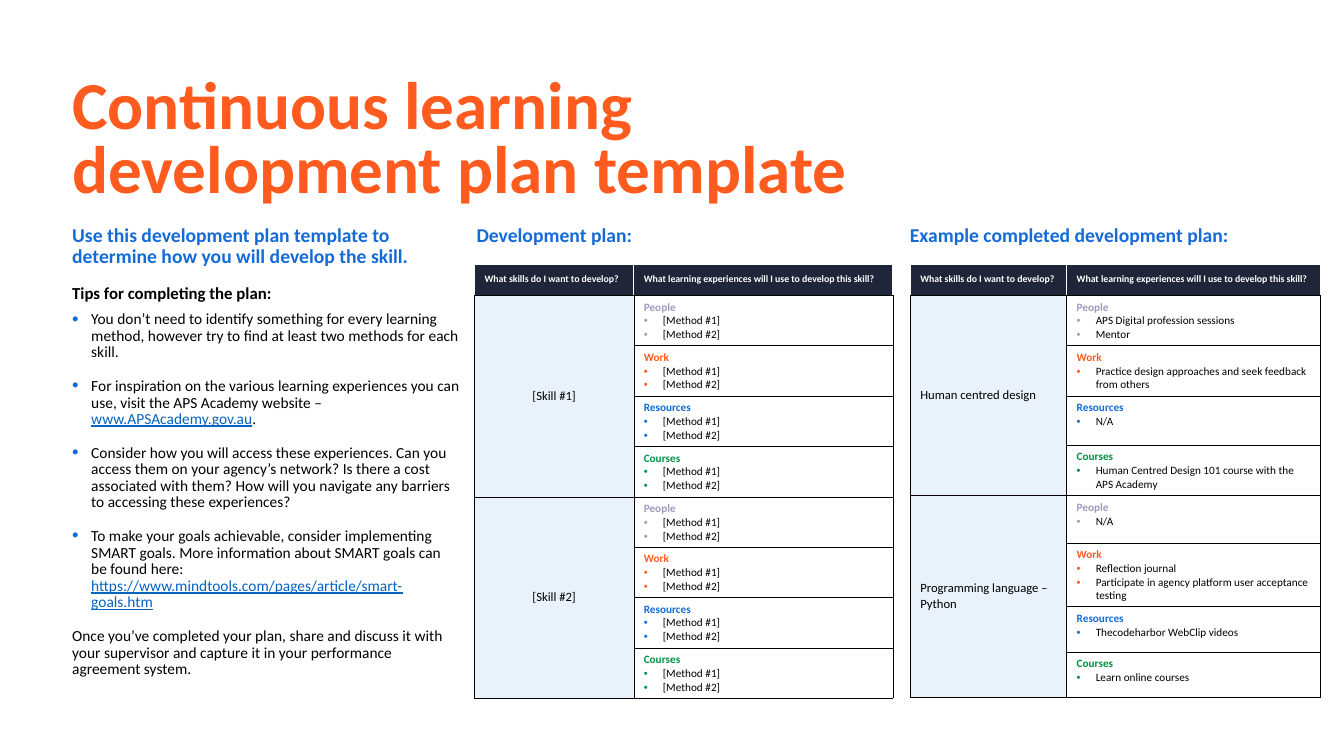
from lxml import etree
from pptx import Presentation
from pptx.dml.color import RGBColor
from pptx.enum.text import MSO_ANCHOR, PP_ALIGN
from pptx.oxml.ns import qn
from pptx.util import Cm, Pt

MIDDLE, BOTTOM = MSO_ANCHOR.MIDDLE, MSO_ANCHOR.BOTTOM
LEFT, CENTER = PP_ALIGN.LEFT, PP_ALIGN.CENTER
FONT = "Calibri"
COLORS = {
    "orange": "FF5B1E", "blue": "146BD7", "link": "0563C1", "black": "000000",
    "white": "FFFFFF", "navy": "202639", "pale": "E9F2FB",
    "lilac": "9C9CC0", "green": "009242",
}
CATEGORIES = [("People", "lilac"), ("Work", "orange"), ("Resources", "blue"), ("Courses", "green")]
HEADERS = ["What skills do I want to develop?",
           "What learning experiences will I use to develop this skill?"]


def format_runs(paragraph, size, color, bold=False):
    for run in paragraph.runs:
        run.font.name = FONT
        run.font.size = Pt(size)
        run.font.bold = bold
        run.font.color.rgb = RGBColor.from_string(COLORS[color])


def add_bullet(paragraph, color, percent):
    properties = paragraph._p.get_or_add_pPr()
    properties.set("marL", str(Cm(0.48)))
    properties.set("indent", str(-Cm(0.48)))
    bullet_color = etree.SubElement(properties, qn("a:buClr"))
    etree.SubElement(bullet_color, qn("a:srgbClr"), val=COLORS[color])
    etree.SubElement(properties, qn("a:buSzPct"), val=str(percent * 1000))
    etree.SubElement(properties, qn("a:buFont"), typeface="Arial")
    etree.SubElement(properties, qn("a:buChar"), char="•")


presentation = Presentation()
presentation.slide_width = Cm(33.87)
presentation.slide_height = Cm(19.05)
slide = presentation.slides.add_slide(presentation.slide_layouts[6])

headings = [
    ("Continuous learning development plan template", 1.57, 0.89, 23.34, 4.45, 48, "orange", 0.8),
    ("Development plan:", 11.76, 5.56, 10.54, 0.84, 14, "blue", 0.9),
    ("Example completed development plan:", 22.68, 5.56, 10.82, 0.84, 14, "blue", 0.9),
]
for text, left, top, width, height, size, color, spacing in headings:
    box = slide.shapes.add_textbox(Cm(left), Cm(top), Cm(width), Cm(height))
    box.text_frame.word_wrap = True
    if size == 48:
        box.text_frame.vertical_anchor = BOTTOM
    paragraph = box.text_frame.paragraphs[0]
    paragraph.text = text
    paragraph.line_spacing = spacing
    format_runs(paragraph, size, color, True)

tips = [
    ("Use this development plan template to determine how you will develop the skill.", "", "", 14, "blue", True, 6, False),
    ("Tips for completing the plan:", "", "", 12, "black", True, 0, False),
    ("You don’t need to identify something for every learning method, however try to find "
     "at least two methods for each skill.", "", "", 11, "black", False, 6, True),
    ("For inspiration on the various learning experiences you can use, visit the APS Academy website – ",
     "www.APSAcademy.gov.au", ".", 11, "black", False, 6, True),
    ("Consider how you will access these experiences. Can you access them on your agency’s network? "
     "Is there a cost associated with them? How will you navigate any barriers to accessing these experiences?",
     "", "", 11, "black", False, 6, True),
    ("To make your goals achievable, consider implementing SMART goals. More information about "
     "SMART goals can\vbe found here: ",
     "https://www.mindtools.com/pages/article/smart-goals.htm", "", 11, "black", False, 6, True),
    ("Once you’ve completed your plan, share and discuss it with your supervisor and capture it "
     "in your performance agreement system.", "", "", 11, "black", False, 0, False),
]
tips_box = slide.shapes.add_textbox(Cm(1.57), Cm(5.56), Cm(10.34), Cm(12.93))
tips_box.text_frame.word_wrap = True
for index, (text, address, ending, size, color, bold, after, bulleted) in enumerate(tips):
    paragraph = tips_box.text_frame.add_paragraph() if index else tips_box.text_frame.paragraphs[0]
    paragraph.text = text
    paragraph.line_spacing = 0.9
    paragraph.space_before = Pt(6 if index else 0)
    paragraph.space_after = Pt(after)
    if bulleted:
        add_bullet(paragraph, "blue", 120)
    if address:
        address_run = paragraph.add_run()
        address_run.text = address
    if ending:
        paragraph.add_run().text = ending
    format_runs(paragraph, size, color, bold)
    if address:
        address_run.font.underline = True
        address_run.font.color.rgb = RGBColor.from_string(COLORS["link"])

methods = ["[Method #1]", "[Method #2]"]
plans = [
    (11.96, [4.01, 6.53], [0.79, 1.19, 1.24, 1.24, 1.24, 1.19, 1.19, 1.19, 1.19], CENTER, None,
     [("[Skill #1]", [methods] * 4), ("[Skill #2]", [methods] * 4)]),
    (22.94, [3.94, 6.4], [0.79, 1.19, 1.24, 1.24, 1.24, 1.19, 1.19, 1.14, 1.14], LEFT, "white",
     [("Human centred design", [
         ["APS Digital profession sessions", "Mentor"],
         ["Practice design approaches and seek feedback from others"],
         ["N/A"],
         ["Human Centred Design 101 course with the APS Academy"]]),
      ("Programming language – Python", [
          ["N/A"],
          ["Reflection journal", "Participate in agency platform user acceptance testing"],
          ["Thecodeharbor WebClip videos"],
          ["Learn online courses"]])]),
]
for left, widths, heights, alignment, method_fill, skills in plans:
    frame = slide.shapes.add_table(len(heights), 2, Cm(left), Cm(6.65), Cm(sum(widths)), Cm(sum(heights)))
    table = frame.table
    table.horz_banding = False
    for column, width in zip(table.columns, widths):
        column.width = Cm(width)
    for row, height in zip(table.rows, heights):
        row.height = Cm(height)

    for column_index, header in enumerate(HEADERS):
        cell = table.cell(0, column_index)
        cell.text_frame.text = header
        cell.vertical_anchor = MIDDLE
        format_runs(cell.text_frame.paragraphs[0], 7, "white", True)

    for skill_index, (skill, experiences) in enumerate(skills):
        first_row = 1 + skill_index * len(CATEGORIES)
        skill_cell = table.cell(first_row, 0)
        skill_cell.merge(table.cell(first_row + len(CATEGORIES) - 1, 0))
        skill_cell.text_frame.text = skill
        skill_cell.vertical_anchor = MIDDLE
        skill_cell.text_frame.paragraphs[0].alignment = alignment
        format_runs(skill_cell.text_frame.paragraphs[0], 9, "black")
        for offset, ((category, color), items) in enumerate(zip(CATEGORIES, experiences)):
            text_frame = table.cell(first_row + offset, 1).text_frame
            text_frame.text = category
            format_runs(text_frame.paragraphs[0], 8, color, True)
            for item in items:
                paragraph = text_frame.add_paragraph()
                paragraph.text = item
                add_bullet(paragraph, color, 100)
                format_runs(paragraph, 8, "black")

    for row_index in range(len(heights)):
        for column_index in range(2):
            cell = table.cell(row_index, column_index)
            fill = "navy" if row_index == 0 else ("pale", method_fill)[column_index]
            if fill:
                cell.fill.solid()
                cell.fill.fore_color.rgb = RGBColor.from_string(COLORS[fill])
            else:
                cell.fill.background()
            properties = cell._tc.get_or_add_tcPr()
            for position, side in enumerate(["lnL", "lnR", "lnT", "lnB"]):
                is_white = row_index == 0 and side != "lnB"
                border = etree.Element(qn("a:" + side), w=str(Pt(1 if is_white else 0.25)))
                border_fill = etree.SubElement(border, qn("a:solidFill"))
                etree.SubElement(border_fill, qn("a:srgbClr"), val=COLORS["white" if is_white else "black"])
                properties.insert(position, border)

presentation.save("out.pptx")
